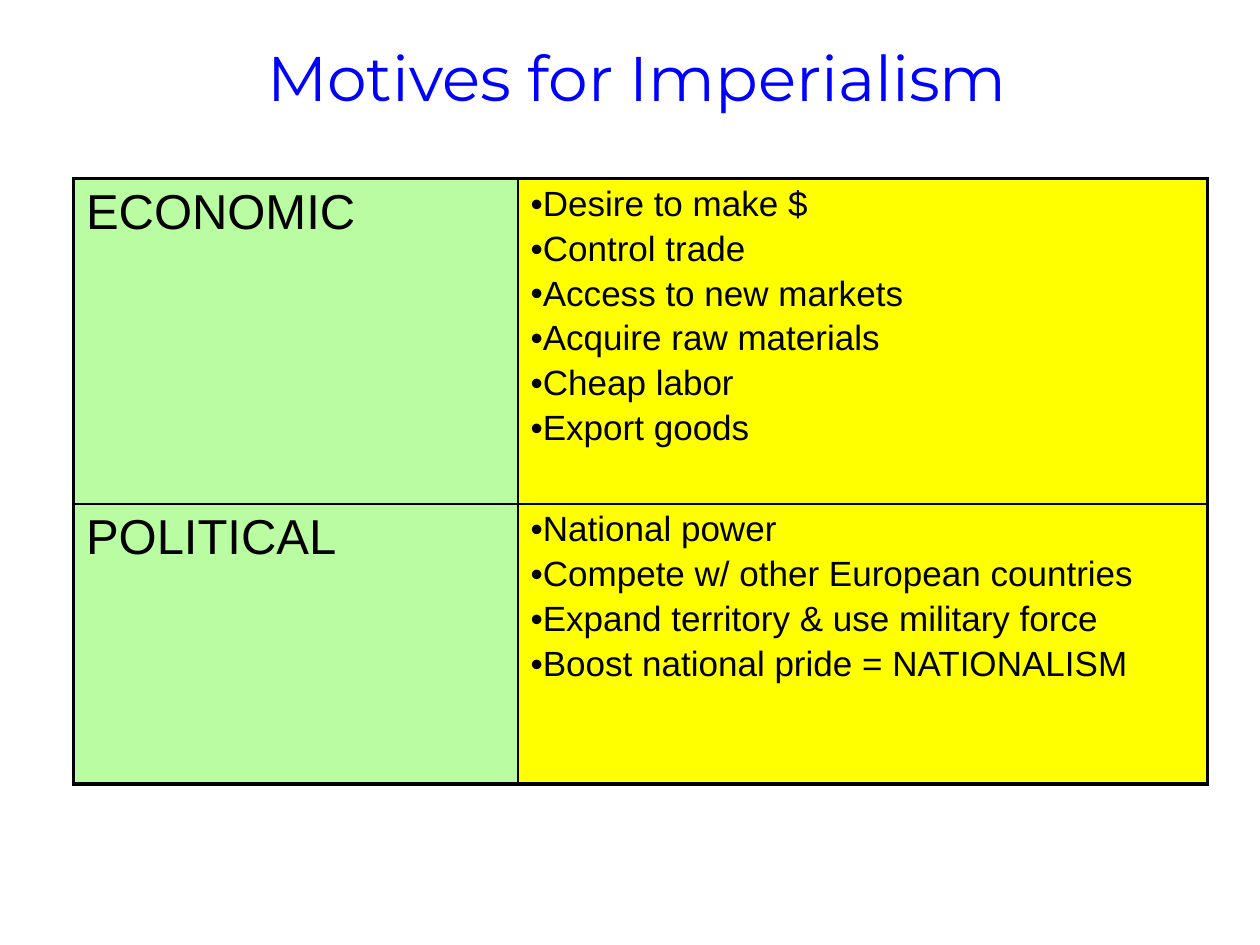
from dataclasses import dataclass

from lxml.etree import SubElement
from pptx import Presentation
from pptx.dml.color import RGBColor
from pptx.enum.text import MSO_ANCHOR, PP_ALIGN
from pptx.oxml import parse_xml
from pptx.oxml.ns import nsdecls, qn
from pptx.util import Pt

COLORS = {
    "title": "0000FF",
    "heading": "BAFCA2",
    "details": "FFFF00",
    "ink": "000000",
}
OUTER_LINE, INNER_LINE = 2.25, 1
COLUMN_WIDTHS = (254, 394)


@dataclass
class Motive:
    heading: str
    points: list[str]
    height: float


MOTIVES = [
    Motive("ECONOMIC", ["Desire to make $", "Control trade", "Access to new markets",
                        "Acquire raw materials", "Cheap labor", "Export goods"], 186),
    Motive("POLITICAL", ["National power", "Compete w/ other European countries",
                         "Expand territory & use military force",
                         "Boost national pride = NATIONALISM"], 160),
]


def line_xml(tag: str, width: float):
    return parse_xml(
        f'<a:{tag} {nsdecls("a")} w="{int(Pt(width))}"><a:solidFill>'
        f'<a:srgbClr val="{COLORS["ink"]}"/></a:solidFill></a:{tag}>'
    )


def style_font(font, name: str, size: float, color: str) -> None:
    font.name = name
    font.size = Pt(size)
    font.color.rgb = RGBColor.from_string(COLORS[color])


def add_title(slide, text: str) -> None:
    title = slide.shapes.title
    title.left, title.top, title.width, title.height = Pt(132), Pt(18), Pt(464), Pt(51)
    frame = title.text_frame
    frame.text = text
    frame.word_wrap = False
    frame.vertical_anchor = MSO_ANCHOR.MIDDLE
    paragraph = frame.paragraphs[0]
    paragraph.alignment = PP_ALIGN.CENTER
    run = paragraph.runs[0]
    style_font(run.font, "Montserrat", 36, "title")
    run.font._element.insert(0, line_xml("ln", 0.75))


def add_bullet(paragraph) -> None:
    properties = paragraph._p.get_or_add_pPr()
    properties.set("marL", "0")
    properties.set("indent", "0")
    SubElement(properties, qn("a:buFont")).set("typeface", "Arial")
    SubElement(properties, qn("a:buChar")).set("char", "•")


def fill_cell(cell, lines: list[str], size: float, color: str, bulleted: bool) -> None:
    cell.fill.solid()
    cell.fill.fore_color.rgb = RGBColor.from_string(COLORS[color])
    cell.text_frame.text = "\n".join(lines)
    for index, paragraph in enumerate(cell.text_frame.paragraphs):
        paragraph.space_before = Pt(3.3 if index else 0)
        if bulleted:
            add_bullet(paragraph)
        style_font(paragraph.runs[0].font, "Arial", size, "ink")


def add_borders(cell, row: int, column: int) -> None:
    outer_sides = {
        "lnL": column == 0,
        "lnR": column == len(COLUMN_WIDTHS) - 1,
        "lnT": row == 0,
        "lnB": row == len(MOTIVES) - 1,
    }
    properties = cell._tc.get_or_add_tcPr()
    for index, (side, outer) in enumerate(outer_sides.items()):
        properties.insert(index, line_xml(side, OUTER_LINE if outer else INNER_LINE))


def add_motives_table(slide) -> None:
    height = sum(motive.height for motive in MOTIVES)
    table = slide.shapes.add_table(
        len(MOTIVES), len(COLUMN_WIDTHS),
        Pt(42), Pt(102), Pt(sum(COLUMN_WIDTHS)), Pt(height),
    ).table
    table.first_row = table.horz_banding = False
    for column, width in zip(table.columns, COLUMN_WIDTHS):
        column.width = Pt(width)
    for row, motive in enumerate(MOTIVES):
        table.rows[row].height = Pt(motive.height)
        fill_cell(table.cell(row, 0), [motive.heading], 28, "heading", False)
        fill_cell(table.cell(row, 1), motive.points, 20, "details", True)
        for column in range(len(COLUMN_WIDTHS)):
            add_borders(table.cell(row, column), row, column)


def main() -> None:
    presentation = Presentation()
    presentation.slide_width, presentation.slide_height = Pt(720), Pt(540)
    # Title Only layout
    slide = presentation.slides.add_slide(presentation.slide_layouts[5])
    add_title(slide, "Motives for Imperialism")
    add_motives_table(slide)
    presentation.save("out.pptx")


if __name__ == "__main__":
    main()
